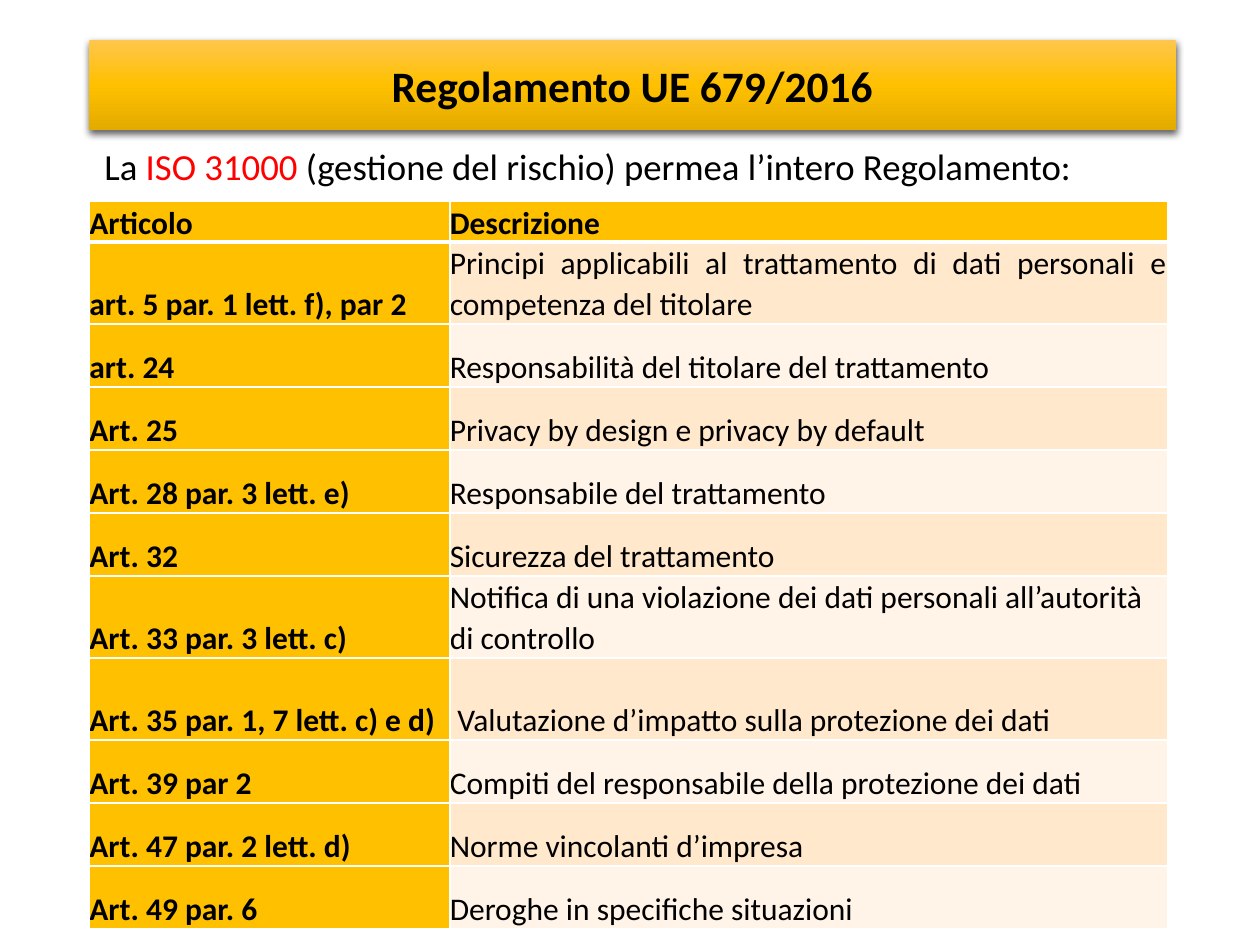
import pptx
import pptx.dml.color
import pptx.enum.shapes
import pptx.enum.text
import pptx.oxml
import pptx.oxml.ns
import pptx.util

Inches = pptx.util.Inches
Pt = pptx.util.Pt
RGBColor = pptx.dml.color.RGBColor
Align = pptx.enum.text.PP_ALIGN
Anchor = pptx.enum.text.MSO_ANCHOR

BLACK = RGBColor(0x00, 0x00, 0x00)
WHITE = RGBColor(0xFF, 0xFF, 0xFF)
RED = RGBColor(0xFF, 0x00, 0x00)
AMBER = RGBColor(0xFF, 0xC0, 0x00)
LIGHT_AMBER = RGBColor(0xFF, 0xC6, 0x4B)
DARK_AMBER = RGBColor(0xE3, 0xAB, 0x00)
PEACH = RGBColor(0xFF, 0xE8, 0xCC)
CREAM = RGBColor(0xFF, 0xF4, 0xE7)
NAMESPACE = pptx.oxml.ns.nsdecls("a")

LEFT = Inches(0.71)
BAND_WIDTH = Inches(8.62)
COLUMN_WIDTHS = (2.86, 5.7)
HEADER_ROW, SINGLE_ROW, DOUBLE_ROW = 0.32, 0.5, 0.65


def write(frame, *runs, size, bold=False, align=Align.LEFT, spacing=1.0):
    """Fill the first paragraph with (text, colour) runs."""
    frame.word_wrap = True
    paragraph = frame.paragraphs[0]
    paragraph.alignment = align
    paragraph.line_spacing = spacing
    for text, colour in runs:
        run = paragraph.add_run()
        run.text = text
        run.font.name = "Calibri"
        run.font.size = Pt(size)
        run.font.bold = bold
        run.font.color.rgb = colour


def add_border(cell, side, width):
    cell._tc.get_or_add_tcPr().append(pptx.oxml.parse_xml(
        f'<a:ln{side} {NAMESPACE} w="{Pt(width)}"><a:solidFill>'
        f'<a:srgbClr val="{WHITE}"/></a:solidFill></a:ln{side}>'))


presentation = pptx.Presentation()
presentation.slide_width = Inches(10)
presentation.slide_height = Inches(7.5)
slide = presentation.slides.add_slide(presentation.slide_layouts[6])

# Title band
title = slide.shapes.add_shape(pptx.enum.shapes.MSO_SHAPE.RECTANGLE,
                               LEFT, Inches(0.32), BAND_WIDTH, Inches(0.71))
title.line.fill.background()
stops = "".join(
    f'<a:gs pos="{share * 1000}"><a:srgbClr val="{colour}"/></a:gs>'
    for share, colour in ((0, LIGHT_AMBER), (50, AMBER), (100, DARK_AMBER)))
title_properties = title._element.spPr
title_properties.insert(2, pptx.oxml.parse_xml(
    f'<a:gradFill {NAMESPACE} rotWithShape="1"><a:gsLst>{stops}</a:gsLst>'
    '<a:lin ang="5400000" scaled="0"/></a:gradFill>'))
title_properties.append(pptx.oxml.parse_xml(
    f'<a:effectLst {NAMESPACE}><a:outerShdw blurRad="{Pt(4.5)}" '
    f'dist="{Pt(1.5)}" dir="5400000" rotWithShape="0">'
    f'<a:srgbClr val="{BLACK}"><a:alpha val="63000"/></a:srgbClr>'
    '</a:outerShdw></a:effectLst>'))
title.text_frame.vertical_anchor = Anchor.MIDDLE
write(title.text_frame, ("Regolamento UE 679/2016", BLACK),
      size=24.8, bold=True, align=Align.CENTER)

# Introduction
intro = slide.shapes.add_textbox(Inches(0.73), Inches(1.13), BAND_WIDTH, Inches(0.47))
write(intro.text_frame, ("La ", BLACK), ("ISO 31000 ", RED),
      ("(gestione del rischio) permea l’intero Regolamento:", BLACK),
      size=21, spacing=0.9)

# Table of articles
articles = [
    ("Articolo", "Descrizione", HEADER_ROW),
    ("art. 5 par. 1 lett. f), par 2",
     "Principi applicabili al trattamento di dati personali e competenza del titolare",
     DOUBLE_ROW),
    ("art. 24", "Responsabilità del titolare del trattamento", SINGLE_ROW),
    ("Art. 25", "Privacy by design e privacy by default", SINGLE_ROW),
    ("Art. 28 par. 3 lett. e)", "Responsabile del trattamento", SINGLE_ROW),
    ("Art. 32", "Sicurezza del trattamento", SINGLE_ROW),
    ("Art. 33 par. 3 lett. c)",
     "Notifica di una violazione dei dati personali all’autorità di controllo",
     DOUBLE_ROW),
    ("Art. 35 par. 1, 7 lett. c) e d)",
     "Valutazione d’impatto sulla protezione dei dati", DOUBLE_ROW),
    ("Art. 39 par 2", "Compiti del responsabile della protezione dei dati", SINGLE_ROW),
    ("Art. 47 par. 2 lett. d)", "Norme vincolanti d’impresa", SINGLE_ROW),
    ("Art. 49 par. 6", "Deroghe in specifiche situazioni", SINGLE_ROW),
]
table = slide.shapes.add_table(
    len(articles), len(COLUMN_WIDTHS), LEFT, Inches(1.6), Inches(sum(COLUMN_WIDTHS)),
    Inches(sum(height for _, _, height in articles))).table
for column, width in zip(table.columns, COLUMN_WIDTHS):
    column.width = Inches(width)

for row, (article, description, height) in enumerate(articles):
    table.rows[row].height = Inches(height)
    for column, text in enumerate((article, description)):
        cell = table.cell(row, column)
        heading = row == 0 or column == 0
        cell.margin_left = cell.margin_top = cell.margin_bottom = 0
        cell.margin_right = Inches(0.01)
        cell.vertical_anchor = Anchor.BOTTOM
        for side in "LRTB":
            at_header_rule = (row, side) in ((0, "B"), (1, "T"))
            add_border(cell, side, 3 if at_header_rule else 1)
        cell.fill.solid()
        cell.fill.fore_color.rgb = AMBER if heading else PEACH if row % 2 else CREAM
        justified = text.startswith("Principi")
        write(cell.text_frame, (text, BLACK), size=18, bold=heading, spacing=1.07,
              align=Align.JUSTIFY if justified else Align.LEFT)
        if text.startswith("Valutazione"):
            cell.margin_left = Inches(0.06)

presentation.save("out.pptx")
